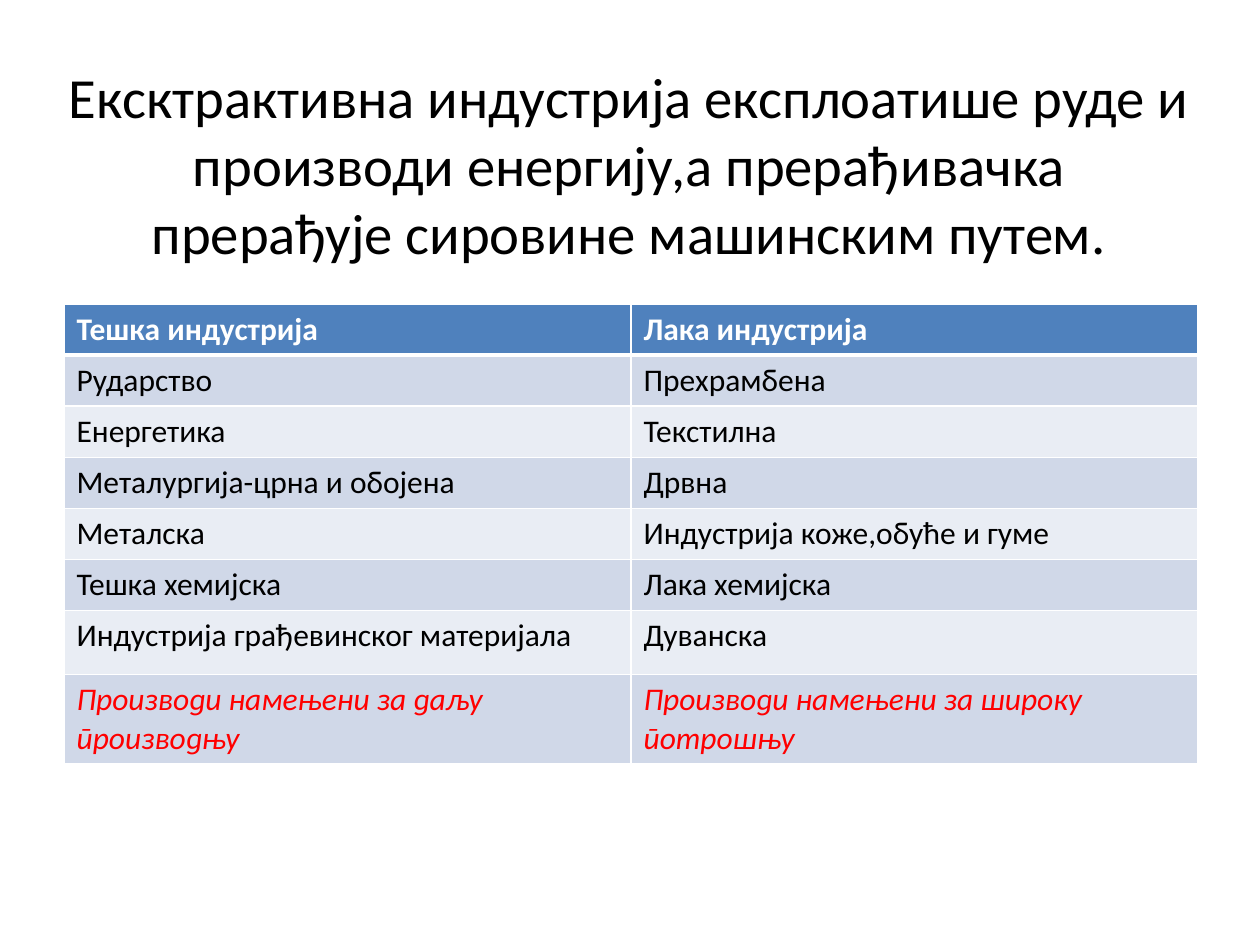
from lxml import etree
from pptx import Presentation
from pptx.dml.color import RGBColor
from pptx.enum.lang import MSO_LANGUAGE_ID
from pptx.enum.text import MSO_ANCHOR, MSO_AUTO_SIZE, PP_ALIGN
from pptx.oxml.ns import qn
from pptx.util import Emu, Pt

PX_PER_INCH = 126
FONT = "Calibri"
SERBIAN = MSO_LANGUAGE_ID.SERBIAN_CYRILLIC
CENTER = PP_ALIGN.CENTER
MIDDLE = MSO_ANCHOR.MIDDLE
NO_AUTOFIT = MSO_AUTO_SIZE.NONE

WHITE = RGBColor(0xFF, 0xFF, 0xFF)
BLACK = RGBColor(0x00, 0x00, 0x00)
RED = RGBColor(0xFF, 0x00, 0x00)
HEADER_BLUE = RGBColor(0x4F, 0x81, 0xBD)
BAND_DARK = RGBColor(0xD0, 0xD8, 0xE8)
BAND_LIGHT = RGBColor(0xE9, 0xED, 0xF4)

TITLE = (
    "Ексктрактивна индустрија експлоатише руде и производи енергију,"
    "а прерађивачка прерађује сировине машинским путем."
)
INDUSTRIES = [
    ("Тешка индустрија", "Лака индустрија"),
    ("Рударство", "Прехрамбена"),
    ("Енергетика", "Текстилна"),
    ("Металургија-црна и обојена", "Дрвна"),
    ("Металска", "Индустрија коже,обуће и гуме"),
    ("Тешка хемијска", "Лака хемијска"),
    ("Индустрија грађевинског материјала", "Дуванска"),
    ("Производи намењени за даљу производњу",
     "Производи намењени за широку потрошњу"),
]
ROW_HEIGHTS = [51] * 6 + [64, 51]
TABLE_HEIGHT = 459  # the last row grows to hold two lines


def px(length):
    return Emu(round(length * 914400 / PX_PER_INCH))


def format_paragraph(paragraph, size, color, bold=False, italic=False):
    font = paragraph.font
    font.name = FONT
    font.size = Pt(size)
    font.color.rgb = color
    font.bold = bold
    font.italic = italic
    for run in paragraph.runs:
        run.font.language_id = SERBIAN


def add_title(slide):
    title = slide.shapes.title
    title.left, title.top, title.width, title.height = map(px, (54, 26, 1150, 275))
    frame = title.text_frame
    frame.text = TITLE
    frame.word_wrap = True
    frame.auto_size = NO_AUTOFIT
    frame.vertical_anchor = MIDDLE
    paragraph = frame.paragraphs[0]
    paragraph.alignment = CENTER
    format_paragraph(paragraph, 32.4, BLACK)


def set_borders(cell, bottom_width):
    """Draw white lines, 1 pt on all sides but the bottom; call before filling."""
    properties = cell._tc.get_or_add_tcPr()
    for side, width in (("L", 1), ("R", 1), ("T", 1), ("B", bottom_width)):
        line = etree.SubElement(properties, qn(f"a:ln{side}"), w=str(Pt(width)))
        fill = etree.SubElement(line, qn("a:solidFill"))
        etree.SubElement(fill, qn("a:srgbClr"), val=str(WHITE))


def format_cell(cell, text, row, last_row):
    is_header = row == 0
    is_summary = row == last_row
    set_borders(cell, 3 if is_header else 1)
    cell.fill.solid()
    if is_header:
        cell.fill.fore_color.rgb = HEADER_BLUE
        color = WHITE
    else:
        cell.fill.fore_color.rgb = BAND_DARK if row % 2 else BAND_LIGHT
        color = RED if is_summary else BLACK
    cell.text = text
    format_paragraph(cell.text_frame.paragraphs[0], 18, color, is_header, is_summary)


def add_industry_table(slide):
    shape = slide.shapes.add_table(
        len(INDUSTRIES), 2, px(64), px(304), px(1134), px(TABLE_HEIGHT)
    )
    table = shape.table
    for row, (texts, height) in enumerate(zip(INDUSTRIES, ROW_HEIGHTS)):
        table.rows[row].height = px(height)
        for column, text in enumerate(texts):
            format_cell(table.cell(row, column), text, row, len(INDUSTRIES) - 1)
    shape.height = px(TABLE_HEIGHT)


def main():
    presentation = Presentation()
    presentation.slide_width = px(1260)
    presentation.slide_height = px(945)
    slide = presentation.slides.add_slide(presentation.slide_layouts[5])
    add_title(slide)
    add_industry_table(slide)
    presentation.save("out.pptx")


if __name__ == "__main__":
    main()
